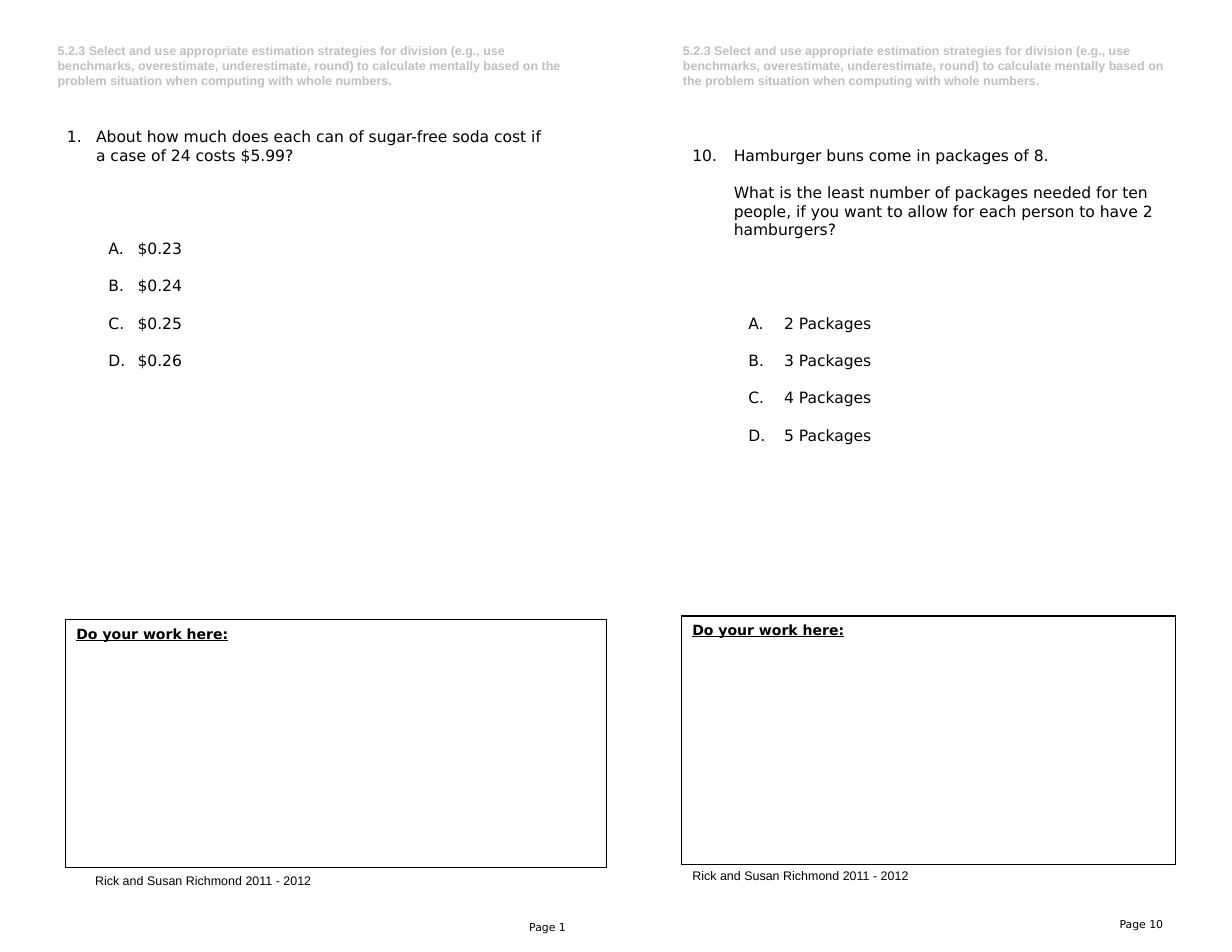
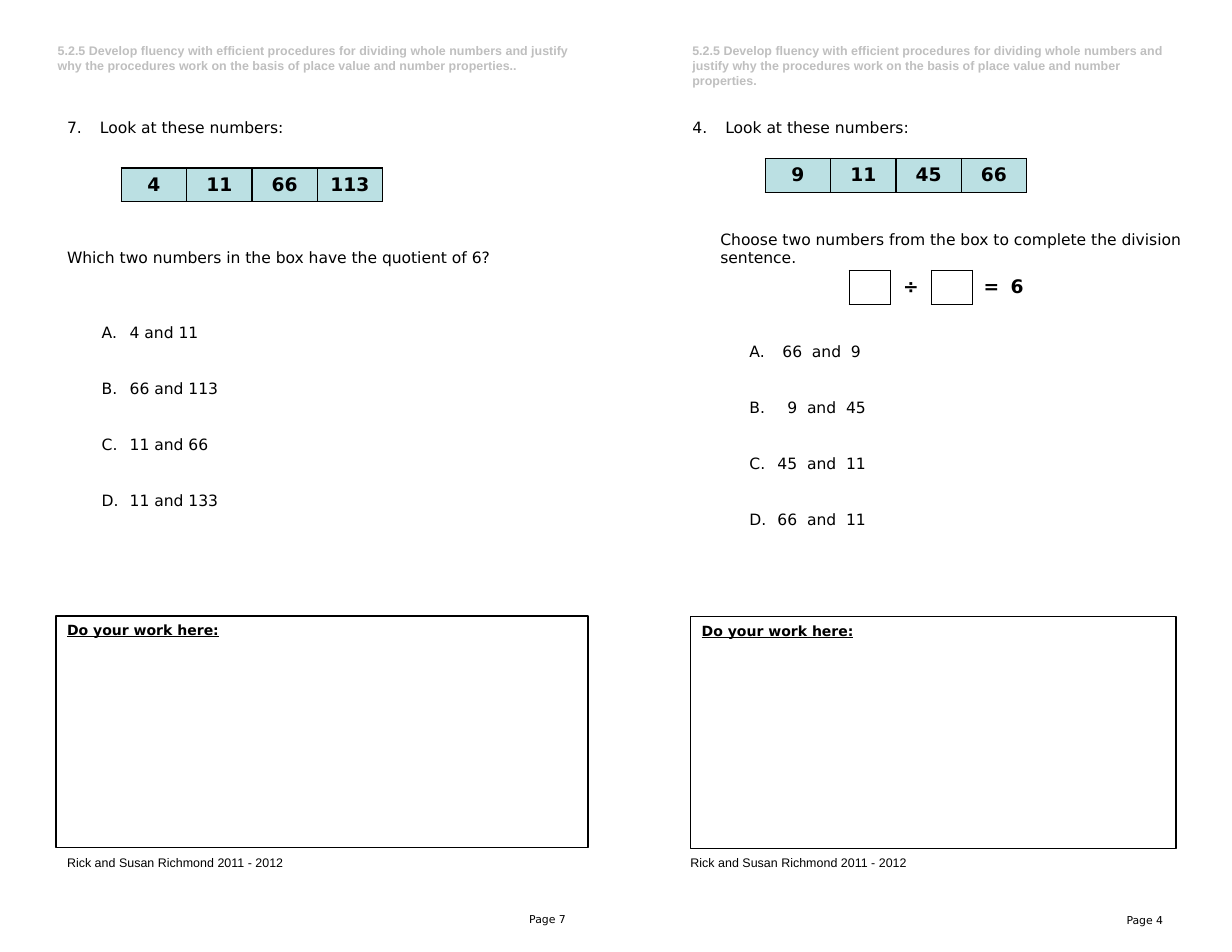
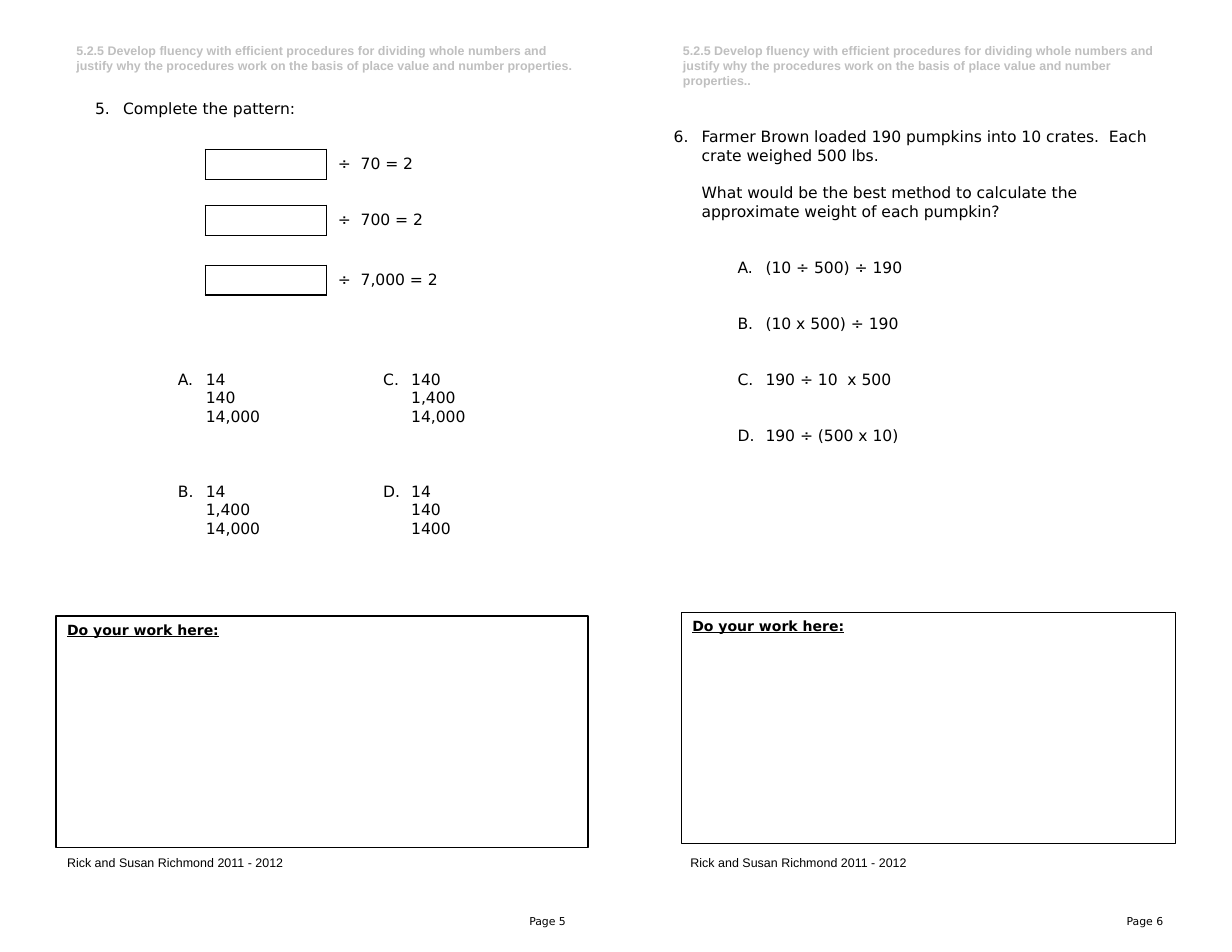
import dataclasses

import pptx
import pptx.dml.color
import pptx.enum.shapes
import pptx.enum.text
import pptx.oxml.ns
import pptx.util
from lxml import etree

Pt = pptx.util.Pt
RIGHT = pptx.enum.text.PP_ALIGN.RIGHT
CENTER = pptx.enum.text.PP_ALIGN.CENTER
TOP = pptx.enum.text.MSO_ANCHOR.TOP
MIDDLE = pptx.enum.text.MSO_ANCHOR.MIDDLE

COLS, ROWS = 132, 102  # grid of the slide, one unit is 1/12 inch
HALF = COLS / 2
UNIT = pptx.util.Inches(11) / COLS


@dataclasses.dataclass(frozen=True)
class Theme:
    ink: str = "000000"
    muted: str = "BFBFBF"
    cell: str = "BBE0E3"
    body_font: str = "DejaVu Sans"
    label_font: str = "Arial"
    page_size: int = 7
    label_size: int = 8
    work_size: int = 9
    body_size: int = 10
    number_size: int = 12
    empty_size: int = 6
    line_pitch: int = 12
    frame: float = 0.75
    rule: float = 1


T = Theme()
CREDIT = "Rick and Susan Richmond 2011 - 2012"
ESTIMATE = (
    "5.2.3 Select and use appropriate estimation strategies for division (e.g., use "
    "benchmarks, overestimate, underestimate, round) to calculate mentally based on the "
    "problem situation when computing with whole numbers."
)
FLUENCY = (
    "5.2.5 Develop fluency with efficient procedures for dividing whole numbers and "
    "justify why the procedures work on the basis of place value and number properties."
)


def grid(*units):
    return [round(u * UNIT) for u in units]


def rgb(color):
    return pptx.dml.color.RGBColor.from_string(color)


def sub(parent, tag, **attrs):
    el = etree.SubElement(parent, pptx.oxml.ns.qn(tag))
    for key, value in attrs.items():
        el.set(key, str(value))
    return el


def write(tf, text, font=T.body_font, size=T.body_size, color=T.ink, bold=False,
          underline=False, align=None, left=0, indent=0, gap=0, scheme=None, start=1):
    """Add a paragraph; left and indent are in inches, gap in lines."""
    p = tf.paragraphs[0]
    if p.runs:
        p = tf.add_paragraph()
    r = p.add_run()
    r.text = text
    r.font.name, r.font.size, r.font.bold = font, Pt(size), bold
    r.font.underline = underline
    r.font.color.rgb = rgb(color)
    p.alignment = align
    if gap:
        p.space_before = Pt(gap * T.line_pitch)
    pPr = p._p.get_or_add_pPr()
    pPr.set("marL", str(pptx.util.Inches(left)))
    pPr.set("indent", str(pptx.util.Inches(indent)))
    if scheme:
        sub(pPr, "a:buFont", typeface=font)
        sub(pPr, "a:buAutoNum", type=scheme, startAt=start)
    return p


def text_box(slide, col, box):
    x, y, w, h = box
    tf = slide.shapes.add_textbox(*grid(col + x, y, w, h)).text_frame
    tf.word_wrap = True
    return tf


def question(tf, number, text, hang=0.25):
    write(tf, text, left=hang, indent=-hang, scheme="arabicPeriod", start=number)


def option(tf, index, text, left, hang=0.25, gap=0):
    write(tf, text, left=left, indent=-hang, gap=gap,
          scheme="alphaUcPeriod", start=index)


def options(tf, texts, left, hang=0.25, first_gap=2, gap=2):
    for i, text in enumerate(texts, 1):
        option(tf, i, text, left, hang, first_gap if i == 1 else gap)


def sheet(slide, col, standard, page, header, work, credit, page_box):
    """Draw the parts every half-page worksheet has."""
    write(text_box(slide, col, header), standard, font=T.label_font,
          size=T.label_size, color=T.muted, bold=True)
    x, y, w, h = work
    sp = slide.shapes.add_shape(pptx.enum.shapes.MSO_SHAPE.RECTANGLE,
                                *grid(col + x, y, w, h))
    sp.shadow.inherit = False
    sp.fill.background()
    sp.line.color.rgb = rgb(T.ink)
    sp.line.width = Pt(T.frame)
    sp.text_frame.word_wrap = True
    sp.text_frame.vertical_anchor = TOP
    write(sp.text_frame, "Do your work here:", size=T.work_size, bold=True,
          underline=True, align=pptx.enum.text.PP_ALIGN.LEFT)
    write(text_box(slide, col, credit), CREDIT, font=T.label_font, size=T.label_size)
    write(text_box(slide, col, page_box), f"Page {page}", size=T.page_size, align=RIGHT)


def draw_borders(cell, sides):
    """Rule the sides named by the letters L, R, T and B."""
    tcPr = cell._tc.get_or_add_tcPr()
    for side in "LRTB":
        ln = sub(tcPr, f"a:ln{side}", w=Pt(T.rule))
        if side in sides:
            sub(sub(ln, "a:solidFill"), "a:srgbClr", val=T.ink)
        else:
            sub(ln, "a:noFill")


def table(slide, col, at, widths, heights, cells, fill=None, anchor=TOP, **fmt):
    """Draw a table whose cells are (text, ruled sides, alignment)."""
    frame = slide.shapes.add_table(
        len(heights), len(widths),
        *grid(col + at[0], at[1], sum(widths), sum(heights)))
    tbl = frame.table
    tbl.first_row = tbl.horz_banding = False
    for column, width in zip(tbl.columns, grid(*widths)):
        column.width = width
    for row, height in zip(tbl.rows, grid(*heights)):
        row.height = height
    for i, line in enumerate(cells):
        for j, (text, sides, align) in enumerate(line):
            cell = tbl.cell(i, j)
            draw_borders(cell, sides)
            cell.vertical_anchor = anchor
            if fill:
                cell.fill.solid()
                cell.fill.fore_color.rgb = rgb(fill)
            else:
                cell.fill.background()
            if text:
                write(cell.text_frame, text, align=align, **fmt)
            else:
                p = cell.text_frame.paragraphs[0]
                p._p.get_or_add_endParaRPr().set("sz", str(T.empty_size * 100))


def number_strip(slide, col, at, numbers):
    table(slide, col, at, [7] * len(numbers), [3.6],
          [[(n, "LRTB", CENTER) for n in numbers]],
          fill=T.cell, anchor=MIDDLE, size=T.number_size, bold=True)


def equation(slide, col, at):
    blank = ("", "LRTB", None)
    table(slide, col, at, [4.4, 4.4, 4.4, 2.8, 6.1], [3.6],
          [[blank, ("÷", "LR", CENTER), blank, ("=", "L", CENTER), ("6", "", None)]],
          size=T.number_size, bold=True)


def pattern(slide, col, at, divisors):
    cells = []
    for divisor in divisors:
        if cells:
            cells.append([("", "TB", None), ("", "", None)])
        cells.append([("", "LRTB", None), (f"÷  {divisor} = 2", "L", None)])
    table(slide, col, at, [13, 16], [3.2, 2.8, 3.2, 3.2, 3.2], cells)


def answer_lists(slide, col, box, first, lists):
    tf = text_box(slide, col, box)
    for i, (head, *rest) in enumerate(lists):
        option(tf, first + i, head, left=0.49, gap=3 if i else 0)
        for value in rest:
            write(tf, value, left=0.49)


def estimation_slide(slide):
    sheet(slide, 0, ESTIMATE, 1, header=(5, 4, 59, 6), work=(7, 66.4, 58, 26.6),
          credit=(9, 93, 56, 2.9), page_box=(52, 98, 9.8, 3.6))
    tf = text_box(slide, 0, (6, 13, 54, 27.5))
    question(tf, 1, "About how much does each can of sugar-free soda cost if "
                    "a case of 24 costs $5.99?", hang=0.26)
    options(tf, ["$0.23", "$0.24", "$0.25", "$0.26"], left=0.63, hang=0.26,
            first_gap=4, gap=1)

    sheet(slide, HALF, ESTIMATE, 10, header=(6, 4, 55, 6), work=(7, 66, 53, 26.6),
          credit=(7, 92.4, 53, 2.9), page_box=(50, 97.7, 9.8, 3.6))
    tf = text_box(slide, HALF, (7, 15, 53, 35.5))
    question(tf, 10, "Hamburger buns come in packages of 8.", hang=0.37)
    write(tf, "What is the least number of packages needed for ten people, if you "
              "want to allow for each person to have 2 hamburgers?", left=0.37, gap=1)
    options(tf, [f"{n} Packages" for n in range(2, 6)], left=0.82, hang=0.32,
            first_gap=4, gap=1)


def number_box_slide(slide):
    sheet(slide, 0, FLUENCY + ".", 7, header=(5, 4, 58, 4.4), work=(6, 66, 57, 24.8),
          credit=(6, 91, 52, 2.9), page_box=(52, 97.2, 9.8, 3.2))
    number_strip(slide, 0, (13, 18), ["4", "11", "66", "113"])
    tf = text_box(slide, 0, (6, 12, 57, 43.7))
    question(tf, 7, " Look at these numbers:")
    write(tf, "Which two numbers in the box have the quotient of 6?", gap=6)
    options(tf, ["4 and 11", "66 and 113", "11 and 66", "11 and 133"], left=0.56,
            first_gap=3)

    sheet(slide, HALF, FLUENCY, 4, header=(7, 4, 53, 6), work=(8, 66.1, 52, 24.8),
          credit=(6.8, 91, 52, 2.9), page_box=(50, 97.3, 9.8, 3.2))
    tf = text_box(slide, HALF, (7, 12, 57, 45.6))
    question(tf, 4, " Look at these numbers:")
    write(tf, "Choose two numbers from the box to complete the division sentence.",
          left=0.25, gap=5)
    options(tf, [" 66  and  9", "  9  and  45", "45  and  11", "66  and  11"],
            left=0.76, first_gap=4)
    number_strip(slide, HALF, (16, 17), ["9", "11", "45", "66"])
    equation(slide, HALF, (25, 29))


def pattern_slide(slide):
    sheet(slide, 0, FLUENCY, 5, header=(7, 4, 57, 4.4), work=(6, 66, 57, 24.8),
          credit=(6, 91, 52, 2.9), page_box=(54, 97.4, 7.8, 3))
    question(text_box(slide, 0, (9, 10, 38, 3.2)), 5, "Complete the pattern:")
    pattern(slide, 0, (22, 16), ["70", "700", "7,000"])
    answer_lists(slide, 0, (15, 39, 17, 19.4), 1,
                 [("14", "140", "14,000"), ("14", "1,400", "14,000")])
    answer_lists(slide, 0, (37, 39, 17, 19.4), 3,
                 [("140", "1,400", "14,000"), ("14", "140", "1400")])

    sheet(slide, HALF, FLUENCY + ".", 6, header=(6, 4, 53, 6), work=(7, 65.6, 53, 24.8),
          credit=(6.8, 91, 52, 2.9), page_box=(52, 97.4, 7.8, 3))
    tf = text_box(slide, HALF, (5, 13, 56, 35.5))
    question(tf, 6, "Farmer Brown loaded 190 pumpkins into 10 crates.  Each crate "
                    "weighed 500 lbs.")
    write(tf, "What would be the best method to calculate the approximate weight of "
              "each pumpkin?", left=0.25, gap=1)
    options(tf, ["(10 ÷ 500) ÷ 190", "(10 x 500) ÷ 190", "190 ÷ 10  x 500",
                 "190 ÷ (500 x 10)"], left=0.82)


def main():
    prs = pptx.Presentation()
    prs.slide_width, prs.slide_height = grid(COLS, ROWS)
    for build in (estimation_slide, number_box_slide, pattern_slide):
        build(prs.slides.add_slide(prs.slide_layouts[6]))
    prs.save("out.pptx")


if __name__ == "__main__":
    main()
